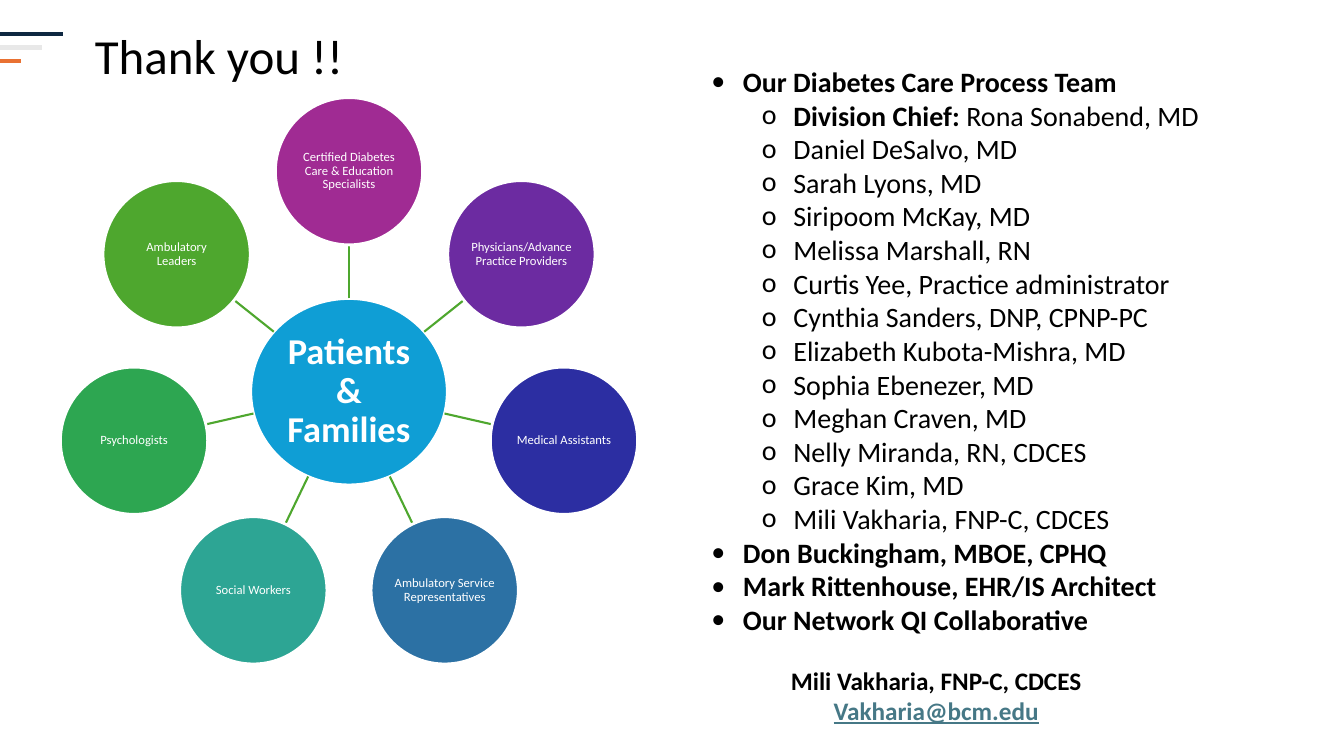
from math import cos, hypot, pi, sin

from lxml.etree import SubElement
from pptx import Presentation
from pptx.dml.color import RGBColor
from pptx.enum.shapes import MSO_CONNECTOR, MSO_SHAPE
from pptx.enum.text import MSO_ANCHOR, MSO_AUTO_SIZE, PP_ALIGN
from pptx.oxml.ns import qn
from pptx.util import Pt

FONT = "Calibri"
COLORS = {
    "navy": "0E2841", "gray": "E8E8E8", "orange": "E97132",
    "black": "000000", "white": "FFFFFF", "link": "467886",
    "hub": "0F9ED5", "spoke": "4EA72E",
    "magenta": "A02B93", "purple": "6C2BA1", "indigo": "2C2EA2",
    "blue": "2C71A4", "teal": "2DA594", "green": "2DA651", "lime": "4EA72E",
}
# Clockwise from the top
ROLES = [
    ("Certified Diabetes Care & Education Specialists", "magenta"),
    ("Physicians/Advance Practice Providers", "purple"),
    ("Medical Assistants", "indigo"),
    ("Ambulatory Service Representatives", "blue"),
    ("Social Workers", "teal"),
    ("Psychologists", "green"),
    ("Ambulatory Leaders", "lime"),
]
CHIEF = ("Division Chief:", " Rona Sonabend, MD")
TEAM = [
    "Daniel DeSalvo, MD",
    "Sarah Lyons, MD",
    "Siripoom McKay, MD",
    "Melissa Marshall, RN",
    "Curtis Yee, Practice administrator",
    "Cynthia Sanders, DNP, CPNP-PC",
    "Elizabeth Kubota-Mishra, MD",
    "Sophia Ebenezer, MD",
    "Meghan Craven, MD",
    "Nelly Miranda, RN, CDCES",
    "Grace Kim, MD",
    "Mili Vakharia, FNP-C, CDCES",
]
PARTNERS = [
    "Don Buckingham, MBOE, CPHQ",
    "Mark Rittenhouse, EHR/IS Architect",
    "Our Network QI Collaborative",
]


def rgb(name):
    return RGBColor.from_string(COLORS[name])


def style(span, size, color="black", bold=False):
    span.font.name = FONT
    span.font.size = Pt(size)
    span.font.bold = bold
    span.font.color.rgb = rgb(color)


def place(shape, left, top, width, height):
    shape.left, shape.top = Pt(left), Pt(top)
    shape.width, shape.height = Pt(width), Pt(height)


def add_line(page, x1, y1, x2, y2, color, width):
    line = page.shapes.add_connector(
        MSO_CONNECTOR.STRAIGHT, Pt(x1), Pt(y1), Pt(x2), Pt(y2))
    line.line.color.rgb = rgb(color)
    line.line.width = Pt(width)
    SubElement(line._element.spPr, qn("a:effectLst"))


def add_corner_lines(page, left, top, width):
    """Three stacked rules, each one third shorter than the one above."""
    for row, color in enumerate(("navy", "gray", "orange")):
        y = top + row * 9.5
        add_line(page, left, y, left + width * (3 - row) / 3, y, color, 3)


def add_title(page, left, top, width, height):
    title = page.shapes.title
    place(title, left, top, width, height)
    frame = title.text_frame
    frame.text = "Thank you !!"
    frame.auto_size = MSO_AUTO_SIZE.NONE
    frame.vertical_anchor = MSO_ANCHOR.BOTTOM
    para = frame.paragraphs[0]
    para.alignment = PP_ALIGN.LEFT
    para.line_spacing = 0.9
    style(para.runs[0], 35)


def add_bubble(page, x, y, radius_x, radius_y, text, color, size, bold=False):
    """Ellipse with centred text, placed by its centre."""
    bubble = page.shapes.add_shape(
        MSO_SHAPE.OVAL, Pt(x - radius_x), Pt(y - radius_y),
        Pt(2 * radius_x), Pt(2 * radius_y))
    bubble.shadow.inherit = False
    bubble.fill.solid()
    bubble.fill.fore_color.rgb = rgb(color)
    bubble.line.color.rgb = rgb("white")
    bubble.line.width = Pt(2)
    frame = bubble.text_frame
    frame.word_wrap = True
    frame.vertical_anchor = MSO_ANCHOR.MIDDLE
    frame.margin_left = frame.margin_right = Pt(1)
    frame.margin_top = frame.margin_bottom = Pt(1)
    frame.text = text
    para = frame.paragraphs[0]
    para.alignment = PP_ALIGN.CENTER
    para.line_spacing = 0.9
    style(para.runs[0], size, "white", bold)


def add_care_wheel(page, x, y, orbit):
    """Hub centred on x, y with the roles evenly spaced around it."""
    hub_x, hub_y, role_radius = 70.2, 66.6, 52.6
    add_bubble(page, x, y, hub_x, hub_y, "Patients & Families", "hub", 26, True)
    for index, (role, color) in enumerate(ROLES):
        angle = 2 * pi * index / len(ROLES)
        dx, dy = sin(angle), -cos(angle)
        start = 1 / hypot(dx / hub_x, dy / hub_y)
        end = orbit - role_radius
        add_line(page, x + start * dx, y + start * dy,
                 x + end * dx, y + end * dy, "spoke", 1.5)
        add_bubble(page, x + orbit * dx, y + orbit * dy,
                   role_radius, role_radius, role, color, 9)


def set_bullet(para, char, indent):
    properties = para._p.get_or_add_pPr()
    properties.set("marL", str(Pt(indent)))
    properties.set("indent", str(-Pt(22.5)))
    SubElement(properties, qn("a:buFont")).set("typeface", FONT)
    SubElement(properties, qn("a:buChar")).set("char", char)


def add_team_list(page, left, top, width, height):
    body = page.placeholders[1]
    place(body, left, top, width, height)
    frame = body.text_frame
    lines = [(0, ["Our Diabetes Care Process Team"]), (1, CHIEF)]
    lines += [(1, [member]) for member in TEAM]
    lines += [(0, [partner]) for partner in PARTNERS]
    frame.text = "\n".join("".join(parts) for _, parts in lines)
    frame.word_wrap = True
    frame.auto_size = MSO_AUTO_SIZE.NONE
    frame.vertical_anchor = MSO_ANCHOR.TOP
    for para, (level, parts) in zip(frame.paragraphs, lines):
        para.level = level
        para.space_before = Pt(0)
        set_bullet(para, "•o"[level], 22.5 + 36 * level)
        para.runs[0].text = parts[0]
        style(para.runs[0], 20, bold=level == 0 or parts is CHIEF)
        for part in parts[1:]:
            span = para.add_run()
            span.text = part
            style(span, 20)


def add_contact(page, left, top, width, height):
    box = page.shapes.add_textbox(Pt(left), Pt(top), Pt(width), Pt(height))
    frame = box.text_frame
    frame.word_wrap = True
    frame.text = "Mili Vakharia, FNP-C, CDCES\nVakharia@bcm.edu"
    for para, color in zip(frame.paragraphs, ("black", "link")):
        para.alignment = PP_ALIGN.CENTER
        style(para.runs[0], 18, color, True)
        para.runs[0].font.underline = color == "link"


def main():
    deck = Presentation()
    deck.slide_width, deck.slide_height = Pt(960), Pt(540)
    page = deck.slides.add_slide(deck.slide_layouts[1])
    add_corner_lines(page, 0, 24.5, 45)
    add_title(page, 60.5, 21.6, 596, 42.5)
    add_care_wheel(page, 249.3, 279.8, 157.5)
    add_team_list(page, 501, 42.5, 377.5, 419)
    add_contact(page, 480, 471.5, 377.5, 73)
    deck.save("out.pptx")


if __name__ == "__main__":
    main()
